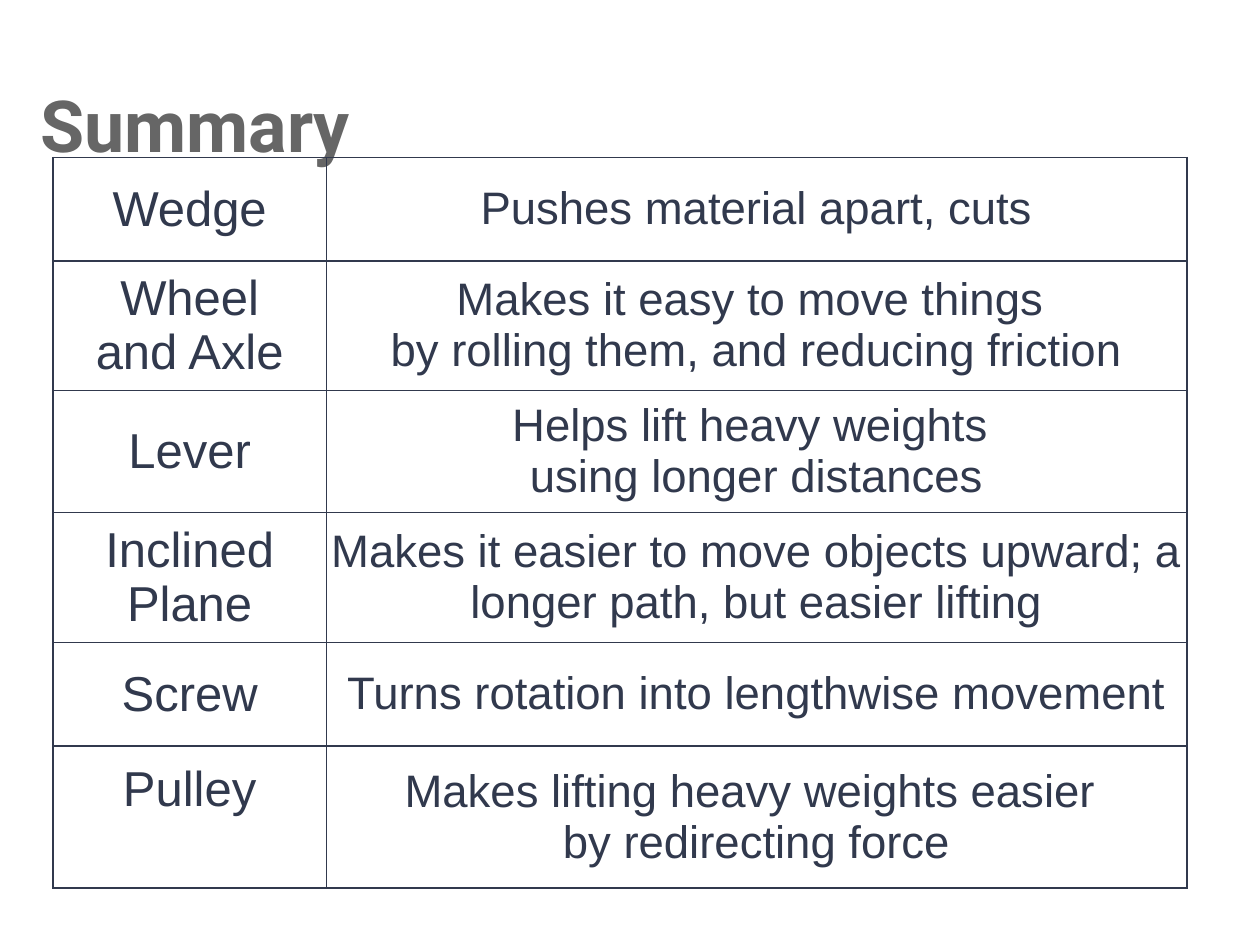
import lxml.etree
import pptx
import pptx.dml.color
import pptx.enum.text
import pptx.oxml.ns
import pptx.util

NAVY = pptx.dml.color.RGBColor(0x31, 0x39, 0x4D)
GREY = pptx.dml.color.RGBColor(0x66, 0x66, 0x66)
MIDDLE = pptx.enum.text.MSO_ANCHOR.MIDDLE
ALIGN = pptx.enum.text.PP_ALIGN
Inches, Pt, qn = pptx.util.Inches, pptx.util.Pt, pptx.oxml.ns.qn

COLUMN_WIDTHS = [2.17, 6.83]
COLUMN_SIZES = [28, 26]
MACHINES = [
    (0.82, "Wedge", "Pushes material apart, cuts"),
    (1.03, "Wheel\nand Axle",
     "Makes it easy to move things \nby rolling them, and reducing friction"),
    (0.97, "Lever", "Helps lift heavy weights \nusing longer distances"),
    (1.03, "Inclined Plane",
     "Makes it easier to move objects upward; a longer path, but easier lifting"),
    (0.82, "Screw", "Turns rotation into lengthwise movement"),
    (1.13, "Pulley", "Makes lifting heavy weights easier \nby redirecting force"),
]


def set_format(target, values):
    for name, value in values.items():
        setattr(target, name, value)


def add_borders(cell):
    properties = cell._tc.get_or_add_tcPr()
    for side in ("a:lnL", "a:lnR", "a:lnT", "a:lnB"):
        line = lxml.etree.SubElement(properties, qn(side), w=str(Pt(1)))
        fill = lxml.etree.SubElement(line, qn("a:solidFill"))
        lxml.etree.SubElement(fill, qn("a:srgbClr"), val=str(NAVY))


presentation = pptx.Presentation()
set_format(presentation, {"slide_width": Inches(10), "slide_height": Inches(7.5)})
slide = presentation.slides.add_slide(presentation.slide_layouts[5])

title = slide.shapes.title
set_format(title, {"left": Inches(0.22), "top": Inches(0.3),
                   "width": Inches(9.28), "height": Inches(1.36)})
title.text_frame.vertical_anchor = MIDDLE
paragraph = title.text_frame.paragraphs[0]
paragraph.text = "Summary"
paragraph.alignment = ALIGN.LEFT
set_format(paragraph.runs[0].font, {"name": "Roboto", "size": Pt(41), "bold": True})
paragraph.runs[0].font.color.rgb = GREY

table = slide.shapes.add_table(
    len(MACHINES), len(COLUMN_WIDTHS), Inches(0.42), Inches(1.25),
    Inches(sum(COLUMN_WIDTHS)), Inches(sum(row[0] for row in MACHINES))).table
set_format(table, {"first_row": False, "horz_banding": False})
for column, width in zip(table.columns, COLUMN_WIDTHS):
    column.width = Inches(width)

for row, (height, *texts) in zip(table.rows, MACHINES):
    row.height = Inches(height)
    for cell, text, size in zip(row.cells, texts, COLUMN_SIZES):
        set_format(cell, {"margin_left": 0, "margin_right": 0,
                          "margin_top": Inches(0.05), "margin_bottom": Inches(0.05),
                          "vertical_anchor": MIDDLE})
        add_borders(cell)
        cell.fill.background()
        paragraph = cell.text_frame.paragraphs[0]
        paragraph.text = text
        paragraph.alignment = ALIGN.CENTER
        for run in paragraph.runs:
            set_format(run.font, {"name": "Arial", "size": Pt(size), "bold": False})
            run.font.color.rgb = NAVY

# "Pulley" sits one text line above the bottom of its row
table.cell(len(MACHINES) - 1, 0).margin_bottom = Inches(0.48)

presentation.save("out.pptx")
